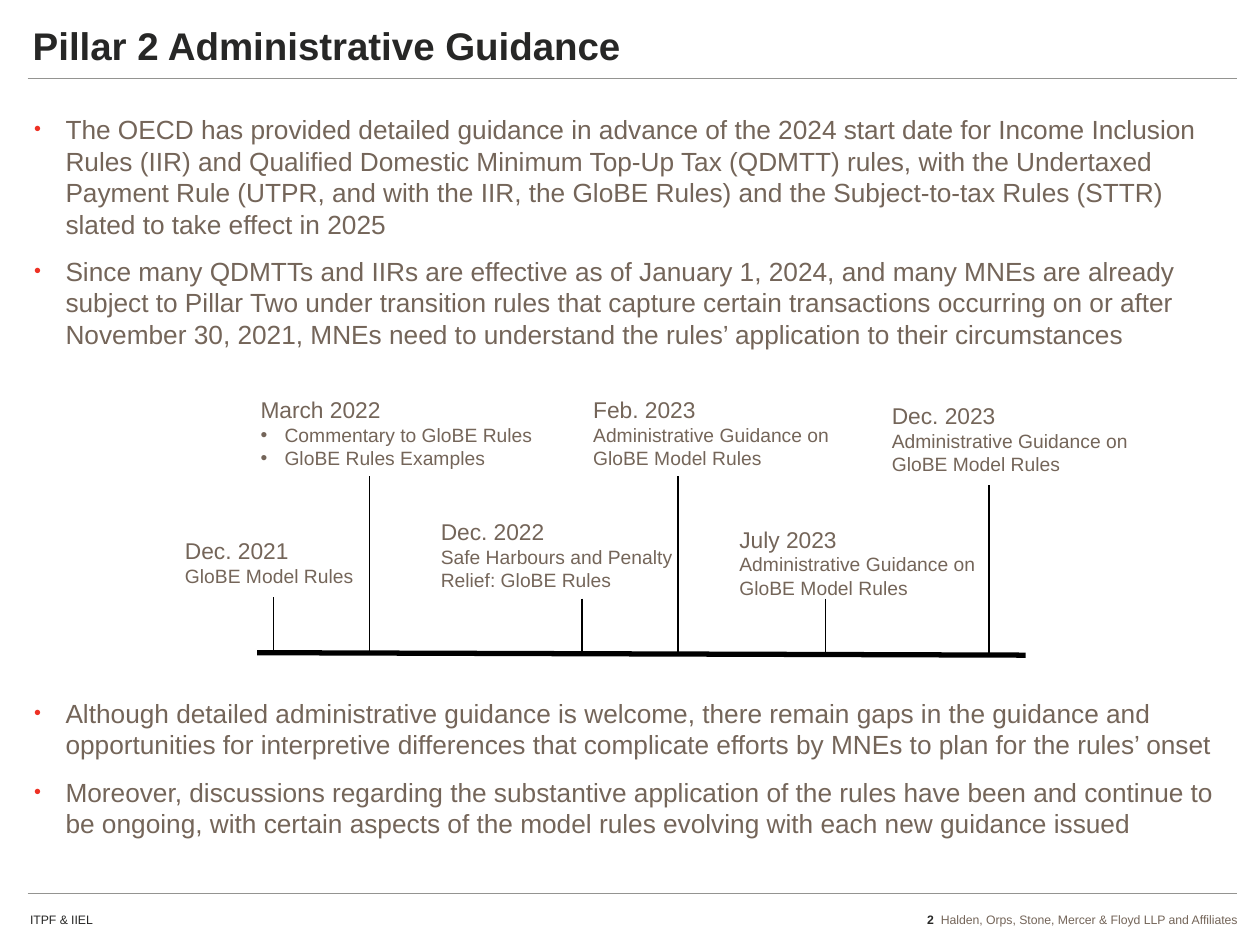
from collections import namedtuple

from lxml.etree import SubElement
from pptx import Presentation
from pptx.dml.color import RGBColor
from pptx.enum.shapes import MSO_CONNECTOR as Connector
from pptx.enum.text import MSO_ANCHOR as Anchor, MSO_AUTO_SIZE as AutoSize, PP_ALIGN as Align
from pptx.oxml.ns import qn
from pptx.util import Inches, Pt

INK = RGBColor(0x27, 0x27, 0x26)
TAUPE = RGBColor(0x74, 0x65, 0x59)
RED = RGBColor(0xEE, 0x31, 0x24)
GREY = RGBColor(0x94, 0x94, 0x91)
BLACK = RGBColor(0, 0, 0)
FONT = "Arial"

Box = namedtuple("Box", "left top width height")
Milestone = namedtuple("Milestone", "date details left top width height stem stem_top stem_end bulleted",
                       defaults=(False,))

GUIDANCE = [
    "The OECD has provided detailed guidance in advance of the 2024 start date for Income Inclusion "
    "Rules (IIR) and Qualified Domestic Minimum Top-Up Tax (QDMTT) rules, with the Undertaxed Payment "
    "Rule (UTPR, and with the IIR, the GloBE Rules) and the Subject-to-tax Rules (STTR) slated to take "
    "effect in 2025",
    "Since many QDMTTs and IIRs are effective as of January 1, 2024, and many MNEs are already subject "
    "to Pillar Two under transition rules that capture certain transactions occurring on or after "
    "November 30, 2021, MNEs need to understand the rules’ application to their circumstances",
    "Although detailed administrative guidance is welcome, there remain gaps in the guidance and "
    "opportunities for interpretive differences that complicate efforts by MNEs to plan for the rules’ "
    "onset",
    "Moreover, discussions regarding the substantive application of the rules have been and continue to "
    "be ongoing, with certain aspects of the model rules evolving with each new guidance issued",
]
GUIDANCE_SPACE_BEFORE = [0, 3, 192.5, 3]

MODEL_RULES = ["Administrative Guidance on GloBE Model Rules"]
MILESTONES = [
    Milestone("Dec. 2021", ["GloBE Model Rules"], 0, 1.12, 1.63, 0.5, 0.8, 1.65, 2.09),
    Milestone("March 2022", ["Commentary to GloBE Rules", "GloBE Rules Examples"],
              0.6, 0, 2.4, 0.69, 1.56, 0.69, 2.09, True),
    Milestone("Dec. 2022", ["Safe Harbours and Penalty Relief: GloBE Rules"],
              2.03, 0.97, 2.1, 0.69, 3.25, 1.66, 2.09),
    Milestone("Feb. 2023", MODEL_RULES, 3.24, 0, 2.17, 0.69, 4.01, 0.69, 2.09),
    Milestone("July 2023", MODEL_RULES, 4.4, 1.03, 2.22, 0.69, 5.18, 1.66, 2.09),
    Milestone("Dec. 2023", MODEL_RULES, 5.61, 0.05, 2.17, 0.69, 6.48, 0.76, 2.12),
]


def place(shape, box):
    """Move and size a shape to a box in inches."""
    shape.left, shape.top, shape.width, shape.height = (Inches(length) for length in box)


def add_run(paragraph, text, size, color=TAUPE, bold=False):
    """Append one formatted run."""
    run = paragraph.add_run()
    run.text = text
    run.font.name, run.font.size, run.font.bold = FONT, Pt(size), bold
    run.font.color.rgb = color


def add_bullet(paragraph, indent, hanging, color=None, percent=100):
    """Give a paragraph a hanging round bullet."""
    properties = paragraph._p.get_or_add_pPr()
    properties.set("marL", str(Inches(indent)))
    properties.set("indent", str(-Inches(hanging)))
    if color is not None:
        SubElement(SubElement(properties, qn("a:buClr")), qn("a:srgbClr"), val=str(color))
    SubElement(properties, qn("a:buSzPct"), val=str(percent * 1000))
    SubElement(properties, qn("a:buFont"), typeface=FONT)
    SubElement(properties, qn("a:buChar"), char="•")


def add_line(slide, start, end, color, weight):
    """Draw a straight line without shadow between two points in inches."""
    line = slide.shapes.add_connector(Connector.STRAIGHT, *(Inches(length) for length in start + end))
    line.line.color.rgb, line.line.width = color, Pt(weight)
    SubElement(line._element.spPr, qn("a:effectLst"))


def add_text(slide, box):
    """Add an empty wrapping text box and return its frame."""
    frame = slide.shapes.add_textbox(*(Inches(length) for length in box)).text_frame
    frame.word_wrap = True
    return frame


def clear_margins(frame):
    """Remove the insets and autofit of a placeholder frame."""
    frame.margin_left = frame.margin_top = frame.margin_right = frame.margin_bottom = 0
    frame.word_wrap, frame.auto_size = True, AutoSize.NONE


def fill_title(slide, box):
    """Set the slide title and the rule under it."""
    title = slide.shapes.title
    place(title, box)
    frame = title.text_frame
    clear_margins(frame)
    frame.vertical_anchor = Anchor.MIDDLE
    heading = frame.paragraphs[0]
    heading.alignment = Align.LEFT
    add_run(heading, "Pillar 2 Administrative Guidance", 22, INK, True)
    rule_top = box.top + 0.47
    add_line(slide, (box.left - 0.04, rule_top), (box.left + 9.56, rule_top), GREY, 0.25)


def fill_guidance(slide, box):
    """Fill the body with the bullets, leaving room for the timeline."""
    body = slide.placeholders[1]
    place(body, box)
    frame = body.text_frame
    clear_margins(frame)
    frame.vertical_anchor = Anchor.TOP
    for index, (statement, before) in enumerate(zip(GUIDANCE, GUIDANCE_SPACE_BEFORE)):
        bullet = frame.add_paragraph() if index else frame.paragraphs[0]
        bullet.space_before, bullet.space_after = Pt(before), Pt(6)
        add_bullet(bullet, 0.3, 0.25, RED, 75)
        add_run(bullet, statement, 15)


def draw_timeline(slide, box):
    """Draw the axis and its dated milestones."""
    add_line(slide, (box.left + 0.67, box.top + 2.09), (box.left + 6.77, box.top + box.height), BLACK, 3)
    for milestone in MILESTONES:
        stem = box.left + milestone.stem
        add_line(slide, (stem, box.top + milestone.stem_top), (stem, box.top + milestone.stem_end), BLACK, 0.75)
        frame = add_text(slide, Box(box.left + milestone.left, box.top + milestone.top,
                                    milestone.width, milestone.height))
        add_run(frame.paragraphs[0], milestone.date, 13)
        for detail in milestone.details:
            entry = frame.add_paragraph()
            if milestone.bulleted:
                add_bullet(entry, 0.19, 0.19)
            add_run(entry, detail, 11)


def draw_footer(slide, box):
    """Draw the footer rule, the event name and the page credit."""
    add_line(slide, (box.left + 0.08, box.top), (box.left + 9.68, box.top), GREY, 0.25)
    event = add_text(slide, Box(box.left, box.top + 0.1, 5.13, 0.22))
    add_run(event.paragraphs[0], "ITPF & IIEL", 7, INK)
    credit = add_text(slide, Box(box.left + box.width - 3.33, box.top + 0.1, 3.33, 0.22)).paragraphs[0]
    credit.alignment = Align.RIGHT
    add_run(credit, "2  ", 7, INK, True)
    add_run(credit, "Halden, Orps, Stone, Mercer & Floyd LLP and Affiliates", 7)


def main():
    """Build and save the slide."""
    deck = Presentation()
    deck.slide_width, deck.slide_height = Inches(10), Inches(7.5)
    slide = deck.slides.add_slide(deck.slide_layouts[1])
    fill_title(slide, Box(0.26, 0.15, 8.36, 0.42))
    fill_guidance(slide, Box(0.22, 0.9, 9.46, 5.95))
    draw_timeline(slide, Box(1.37, 3.09, 7.78, 2.11))
    draw_footer(slide, Box(0.14, 7.09, 9.78, 0.32))
    deck.save("out.pptx")


if __name__ == "__main__":
    main()
